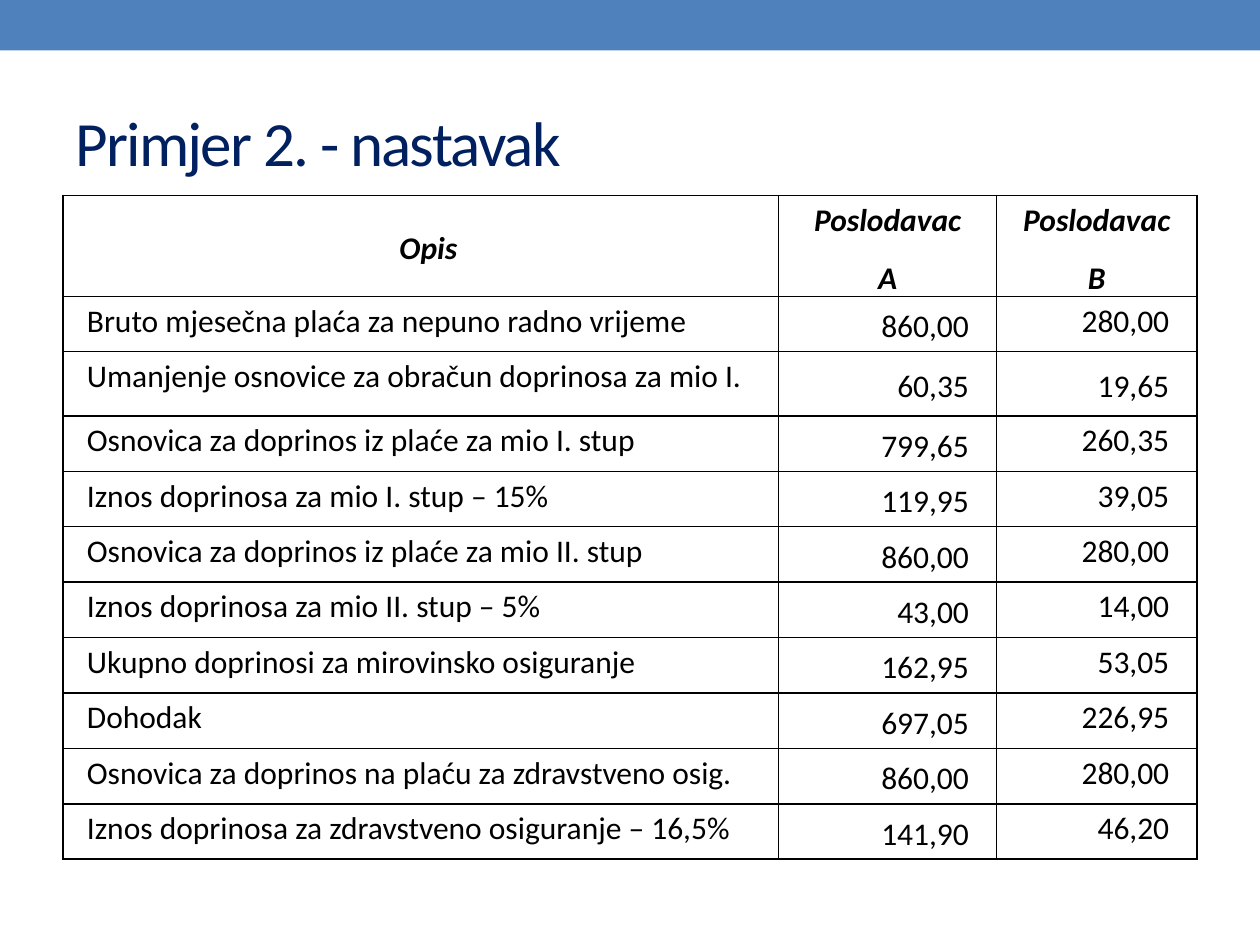
from pptx import Presentation
from pptx.dml.color import RGBColor
from pptx.enum import shapes, text
from pptx.oxml import parse_xml
from pptx.oxml.ns import nsdecls
from pptx.util import Inches, Pt

COLORS = {"bar": "4F81BD", "title": "002060", "ink": "000000"}
FONT = "Calibri"
COL_WIDTHS = [5.68, 1.73, 1.59]
HEADER_HEIGHT, ROW_HEIGHT, TALL_ROW_HEIGHT = 0.74, 0.44, 0.51
TALL_ROW = 2

HEADERS = ["Opis", "Poslodavac\nA", "Poslodavac\nB"]
ROWS = [
    ("Bruto mjesečna plaća za nepuno radno vrijeme", "860,00", "280,00"),
    ("Umanjenje osnovice za obračun doprinosa za mio I.", "60,35", "19,65"),
    ("Osnovica za doprinos iz plaće za mio I. stup", "799,65", "260,35"),
    ("Iznos doprinosa za mio I. stup – 15%", "119,95", "39,05"),
    ("Osnovica za doprinos iz plaće za mio II. stup", "860,00", "280,00"),
    ("Iznos doprinosa za mio II. stup – 5%", "43,00", "14,00"),
    ("Ukupno doprinosi za mirovinsko osiguranje", "162,95", "53,05"),
    ("Dohodak", "697,05", "226,95"),
    ("Osnovica za doprinos na plaću za zdravstveno osig.", "860,00", "280,00"),
    ("Iznos doprinosa za zdravstveno osiguranje – 16,5%", "141,90", "46,20"),
]


def style_font(font, size, color):
    font.name = FONT
    font.size = Pt(size)
    font.color.rgb = RGBColor.from_string(COLORS[color])


def add_bar(s):
    bar = s.shapes.add_shape(shapes.MSO_SHAPE.RECTANGLE, 0, 0, Inches(10), Inches(0.4))
    bar.shadow.inherit = False
    bar.fill.solid()
    bar.fill.fore_color.rgb = RGBColor.from_string(COLORS["bar"])
    bar.line.fill.background()


def add_title(s, title):
    sp = s.shapes.add_textbox(Inches(0.5), Inches(0.58), Inches(9), Inches(1.08))
    tf = sp.text_frame
    tf.word_wrap = True
    tf.vertical_anchor = text.MSO_ANCHOR.MIDDLE
    tf.text = title
    r = tf.paragraphs[0].runs[0]
    style_font(r.font, 36, "title")
    r.font._element.set("spc", "-100")


def set_borders(cell):
    """Draw a 1 pt line on all four sides; borders precede the fill in tcPr."""
    tc_pr = cell._tc.get_or_add_tcPr()
    for i, side in enumerate(("lnL", "lnR", "lnT", "lnB")):
        tc_pr.insert(i, parse_xml(
            f'<a:{side} {nsdecls("a")} w="{Pt(1)}"><a:solidFill>'
            f'<a:srgbClr val="{COLORS["ink"]}"/></a:solidFill></a:{side}>'))


def fill_cell(cell, content, align, anchor, indent=0, right=0, header=False):
    cell.fill.background()
    set_borders(cell)
    cell.margin_left = cell.margin_right = Inches(0.07)
    cell.margin_top = cell.margin_bottom = 0
    cell.vertical_anchor = anchor
    cell.text_frame.text = content
    for p in cell.text_frame.paragraphs:
        p.alignment = align
        p.line_spacing = 1.15
        p.space_after = Pt(8)
        p_pr = p._p.get_or_add_pPr()
        p_pr.set("marL", "0")
        p_pr.set("marR", str(Inches(right)))
        p_pr.set("indent", str(Inches(indent)))
        for r in p.runs:
            style_font(r.font, 18, "ink")
            r.font.bold = r.font.italic = header


def add_contribution_table(s):
    heights = [HEADER_HEIGHT] + [ROW_HEIGHT] * len(ROWS)
    heights[TALL_ROW] = TALL_ROW_HEIGHT
    frame = s.shapes.add_table(len(heights), len(COL_WIDTHS), Inches(0.5), Inches(1.55),
                               Inches(sum(COL_WIDTHS)), Inches(sum(heights)))
    table = frame.table
    table.first_row = table.horz_banding = False
    for col, width in zip(table.columns, COL_WIDTHS):
        col.width = Inches(width)
    for row, height in zip(table.rows, heights):
        row.height = Inches(height)

    align, anchor = text.PP_ALIGN, text.MSO_ANCHOR
    # Header row
    for c, header in enumerate(HEADERS):
        fill_cell(table.cell(0, c), header, align.CENTER, anchor.MIDDLE,
                  indent=0 if c else 0.12, header=True)
    # Description and the amounts of both employers
    for i, (label, amount_a, amount_b) in enumerate(ROWS, start=1):
        fill_cell(table.cell(i, 0), label, align.JUSTIFY, anchor.TOP, indent=0.12)
        fill_cell(table.cell(i, 1), amount_a, align.RIGHT, anchor.MIDDLE,
                  indent=0.3, right=0.15)
        fill_cell(table.cell(i, 2), amount_b, align.RIGHT,
                  anchor.MIDDLE if i == TALL_ROW else anchor.TOP,
                  indent=0.3, right=0.15)


def main():
    prs = Presentation()
    prs.slide_width, prs.slide_height = Inches(10), Inches(7.5)
    s = prs.slides.add_slide(prs.slide_layouts[6])
    add_bar(s)
    add_title(s, "Primjer 2. - nastavak")
    add_contribution_table(s)
    prs.save("out.pptx")


if __name__ == "__main__":
    main()
